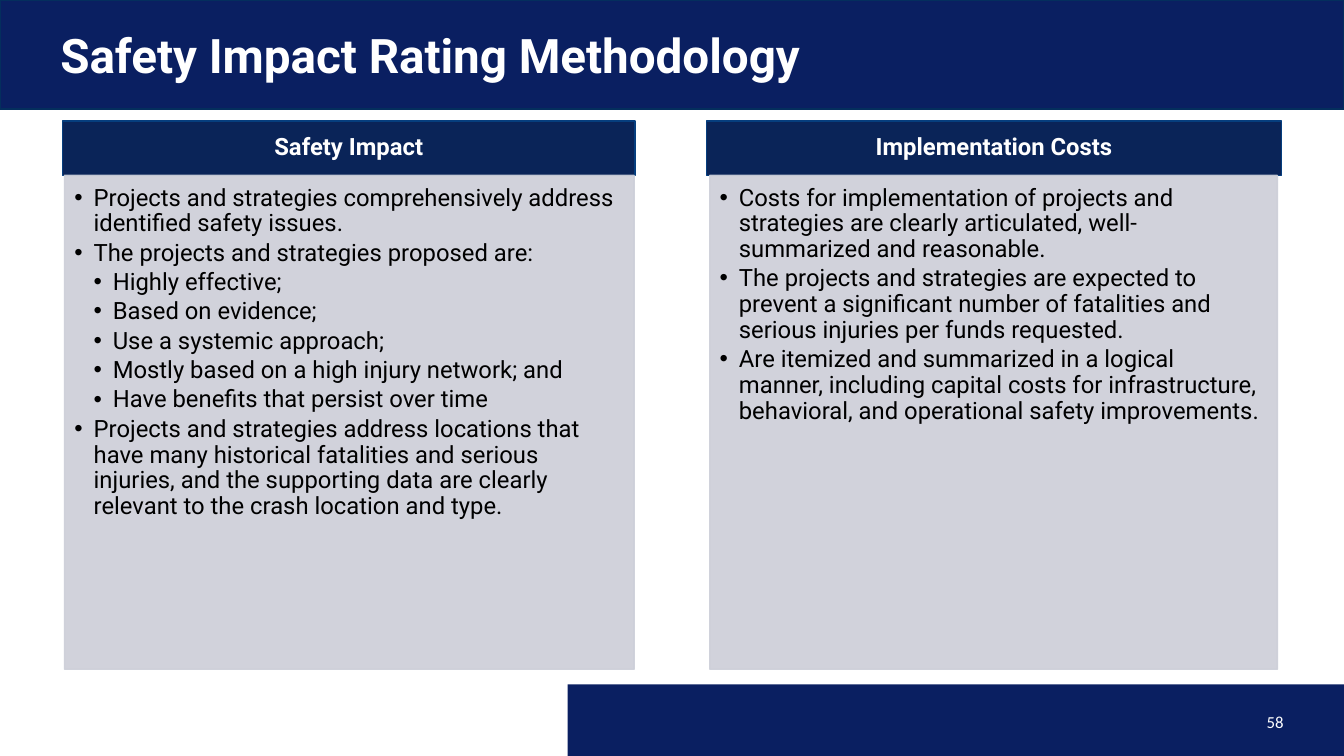
from pptx import Presentation
from pptx.dml.color import RGBColor
from pptx.enum.shapes import MSO_SHAPE as Shape
from pptx.enum.text import MSO_ANCHOR as Anchor, PP_ALIGN as Align
from pptx.oxml.ns import qn
from pptx.util import Inches, Pt
from lxml.etree import SubElement

NAVY = RGBColor(0x0A, 0x1F, 0x61)
EDGE = RGBColor(0x04, 0x2E, 0x5D)
HEAD = RGBColor(0x0A, 0x24, 0x58)
RIM = RGBColor(0x06, 0x3E, 0x7E)
GRAY = RGBColor(0xCC, 0xCE, 0xD8)
WHITE = RGBColor(0xFF, 0xFF, 0xFF)
BLACK = RGBColor(0, 0, 0)

deck = Presentation()
deck.slide_width, deck.slide_height = Inches(13.33), Inches(7.5)
slide = deck.slides.add_slide(deck.slide_layouts[6])


def block(place, fill, line=None):
    box = slide.shapes.add_shape(Shape.RECTANGLE, *map(Inches, place))
    box.shadow.inherit = False
    box.fill.solid()
    box.fill.fore_color.rgb = fill
    if line is None:
        box.line.fill.background()
    else:
        box.line.color.rgb = line
        box.line.width = Pt(1)
    return box


def write(box, para, text, size, color, bold=False, face="Roboto"):
    box.text_frame.word_wrap = True
    run = para.add_run()
    run.text = text
    run.font.name = face
    run.font.size = Pt(size)
    run.font.bold = bold
    run.font.color.rgb = color


block((0, 0, 13.33, 1.08), NAVY, EDGE)
block((5.63, 6.79, 7.7, 0.71), NAVY)

labels = [
    ((9.83, 7.04, 3, 0.25), "58", 12, False, "Calibri", Align.RIGHT),
    ((0.5, 0, 12.33, 1.08), "Safety Impact Rating Methodology", 34, True, "Roboto", Align.LEFT),
]
for place, text, size, bold, face, align in labels:
    box = slide.shapes.add_textbox(*map(Inches, place))
    box.text_frame.vertical_anchor = Anchor.MIDDLE
    para = box.text_frame.paragraphs[0]
    para.alignment = align
    write(box, para, text, size, WHITE, bold, face)

columns = [
    ("Safety Impact", 0.62, 5.68, 0.64, 5.65, [
        (1, "Projects and strategies comprehensively address identified safety issues."),
        (1, "The projects and strategies proposed are:"),
        (2, "Highly effective;"),
        (2, "Based on evidence;"),
        (2, "Use a systemic approach;"),
        (2, "Mostly based on a high injury network; and"),
        (2, "Have benefits that persist over time"),
        (1, "Projects and strategies address locations that have many historical fatalities "
            "and serious injuries, and the supporting data are clearly relevant to the crash "
            "location and type."),
    ]),
    ("Implementation Costs", 7.01, 5.7, 7.04, 5.63, [
        (1, "Costs for implementation of projects and strategies are clearly articulated, "
            "well-summarized and reasonable."),
        (1, "The projects and strategies are expected to prevent a significant number of "
            "fatalities and serious injuries per funds requested."),
        (1, "Are itemized and summarized in a logical manner, including capital costs for "
            "infrastructure, behavioral, and operational safety improvements."),
    ]),
]
for title, left, width, inner, span, points in columns:
    head = block((left, 1.2, width, 0.54), HEAD, RIM)
    frame = head.text_frame
    frame.vertical_anchor = Anchor.MIDDLE
    frame.margin_left = frame.margin_right = Inches(0.13)
    frame.margin_top = frame.margin_bottom = Inches(0.08)
    para = frame.paragraphs[0]
    para.alignment = Align.CENTER
    para.line_spacing = 0.9
    write(head, para, title, 17, WHITE, True)

    body = block((inner, 1.74, span, 4.9), GRAY, GRAY)
    for tint in body._element.spPr.iter(qn("a:srgbClr")):
        SubElement(tint, qn("a:alpha"), val="90000")
    frame = body.text_frame
    frame.vertical_anchor = Anchor.TOP
    frame.margin_left = frame.margin_top = Inches(0.1)
    frame.margin_right, frame.margin_bottom = Inches(0.13), Inches(0.15)
    for rank, (level, text) in enumerate(points):
        para = frame.add_paragraph() if rank else frame.paragraphs[0]
        para.level = level
        para.alignment = Align.LEFT
        para.line_spacing = 0.9
        para.space_after = Pt(2.6)
        props = para._p.get_or_add_pPr()
        props.set("marL", str(Inches(0.19 * level)))
        props.set("indent", str(Inches(-0.19)))
        SubElement(props, qn("a:buFont"), typeface="Arial")
        SubElement(props, qn("a:buChar"), char="•")
        write(body, para, text, 17, BLACK)

deck.save("out.pptx")
